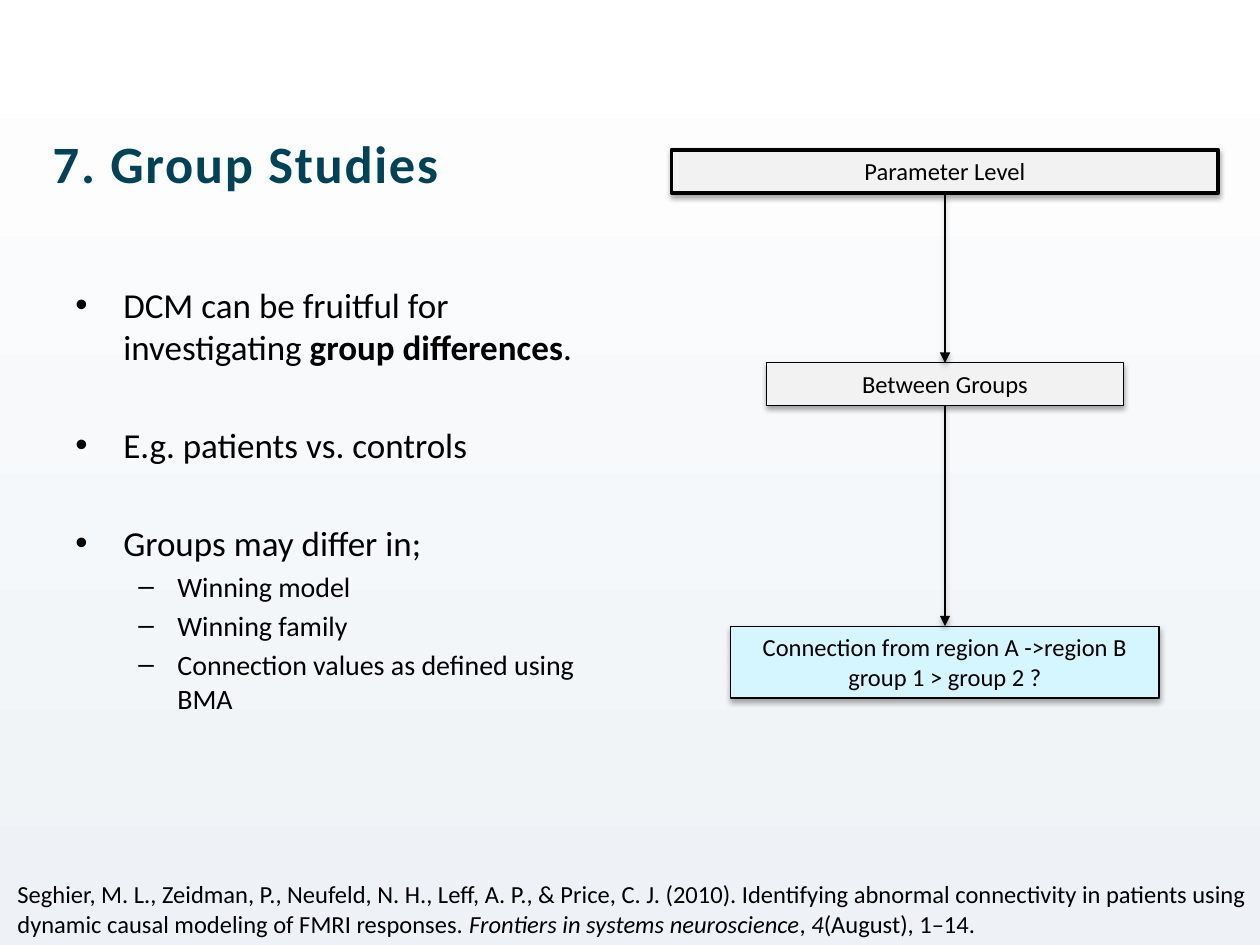
from itertools import pairwise

from lxml import etree
from pptx import Presentation
from pptx.dml.color import RGBColor
from pptx.enum import shapes, text
from pptx.oxml import ns
from pptx.util import Inches, Pt

THEME = {
    "font": "Calibri",
    "ink": "000000", "title": "004359", "grey": "F2F2F2", "blue": "D5F5FF",
    "top": "FFFFFF", "base": "EEF2F6",
    "head": 30, "main": 20, "sub": 16, "note": 14,
}
TITLE = "7. Group Studies"
POINTS = [
    (0, [("DCM can be fruitful for investigating ", ""), ("group differences", "b"), (".", "")]),
    (0, [("E.g. patients vs. controls", "")]),
    (0, [("Groups may differ in;", "")]),
    (1, [("Winning model", "")]),
    (1, [("Winning family", "")]),
    (1, [("Connection values as defined using BMA", "")]),
]
LEVELS = [("•", "main", 0.38, 0.38, 32), ("–", "sub", 0.81, 0.31, 3.2)]
AXIS = 7.5
STEPS = [
    ("Parameter Level", 1.19, 4.34, 0.34, "grey", 2.25),
    ("Between Groups", 2.88, 2.83, 0.34, "grey", 0.75),
    ("Connection from region A ->region B\ngroup 1 > group 2 ?", 4.97, 3.4, 0.57, "blue", 0.75),
]
SOURCE = [
    ("Seghier, M. L., Zeidman, P., Neufeld, N. H., Leff, A. P., & Price, C. J. (2010). "
     "Identifying abnormal connectivity in patients using dynamic causal modeling of "
     "FMRI responses. ", ""),
    ("Frontiers in systems neuroscience", "i"), (", ", ""), ("4", "i"),
    ("(August), 1–14.", ""),
]


def color(name):
    return RGBColor.from_string(THEME[name])


def style(font, size, ink="ink"):
    font.name = THEME["font"]
    font.size = Pt(THEME[size])
    font.color.rgb = color(ink)


def write(para, parts, size):
    for words, mark in parts:
        run = para.add_run()
        run.text = words
        style(run.font, size)
        run.font.bold = "b" in mark
        run.font.italic = "i" in mark


def add_text(slide, *place):
    frame = slide.shapes.add_textbox(*map(Inches, place)).text_frame
    frame.word_wrap = True
    return frame


def add_shadow(shape):
    props = shape._element.spPr
    for old in props.findall(ns.qn("a:effectLst")):
        props.remove(old)
    effects = etree.SubElement(props, ns.qn("a:effectLst"))
    outer = etree.SubElement(effects, ns.qn("a:outerShdw"), blurRad="40000",
                             dist="23000", dir="5400000", rotWithShape="0")
    tint = etree.SubElement(outer, ns.qn("a:srgbClr"), val=THEME["ink"])
    etree.SubElement(tint, ns.qn("a:alpha"), val="35000")


def add_points(slide):
    frame = add_text(slide, 0.5, 2.2, 4.42, 4.62)
    for i, (level, parts) in enumerate(POINTS):
        para = frame.add_paragraph() if i else frame.paragraphs[0]
        sign, size, left, hang, gap = LEVELS[level]
        para.level = level
        if i:
            para.space_before = Pt(gap)
        props = para._p.get_or_add_pPr()
        props.set("marL", str(Inches(left)))
        props.set("indent", str(-Inches(hang)))
        etree.SubElement(props, ns.qn("a:buFont"), typeface="Arial")
        etree.SubElement(props, ns.qn("a:buChar"), char=sign)
        write(para, parts, size)


def add_step(slide, words, top, width, height, fill, weight):
    place = map(Inches, (AXIS - width / 2, top, width, height))
    box = slide.shapes.add_shape(shapes.MSO_SHAPE.RECTANGLE, *place)
    box.fill.solid()
    box.fill.fore_color.rgb = color(fill)
    box.line.color.rgb = color("ink")
    box.line.width = Pt(weight)
    add_shadow(box)
    frame = box.text_frame
    frame.word_wrap = True
    frame.vertical_anchor = text.MSO_ANCHOR.TOP
    para = frame.paragraphs[0]
    para.text = words
    para.alignment = text.PP_ALIGN.CENTER
    for run in para.runs:
        style(run.font, "note")
    return box


def add_arrow(slide, start, end):
    line = slide.shapes.add_connector(shapes.MSO_CONNECTOR.STRAIGHT, 0, 0, 0, 0)
    line.begin_connect(start, 2)
    line.end_connect(end, 0)
    line.line.color.rgb = color("ink")
    line.line.width = Pt(0.75)
    etree.SubElement(line.line._get_or_add_ln(), ns.qn("a:tailEnd"), type="triangle")
    add_shadow(line)


def main():
    deck = Presentation()
    deck.slide_width, deck.slide_height = Inches(10), Inches(7.5)
    slide = deck.slides.add_slide(deck.slide_layouts[6])

    back = slide.background.fill
    back.gradient()
    back.gradient_angle = 270
    for stop, name in zip(back.gradient_stops, ("top", "base")):
        stop.color.rgb = color(name)

    head = add_text(slide, 0.32, 0.99, 9.28, 1.42)
    head.text = TITLE
    run = head.paragraphs[0].runs[0]
    style(run.font, "head", "title")
    run.font.bold = True
    run._r.get_or_add_rPr().set("spc", "100")

    add_points(slide)
    boxes = [add_step(slide, *step) for step in STEPS]
    for start, end in pairwise(boxes):
        add_arrow(slide, start, end)

    note = add_text(slide, 0.04, 6.93, 9.96, 0.57)
    write(note.paragraphs[0], SOURCE, "note")
    deck.save("out.pptx")


if __name__ == "__main__":
    main()
